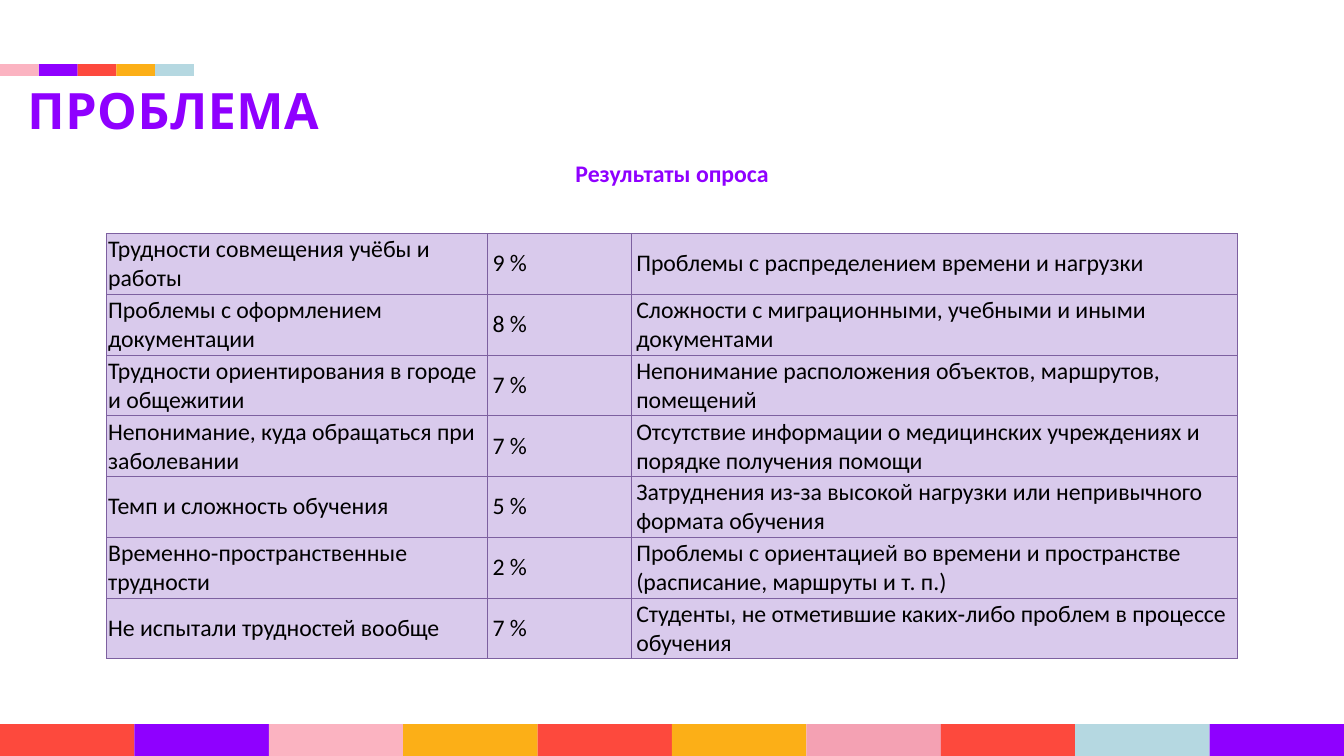
from lxml import etree
from pptx import Presentation
from pptx.dml.color import RGBColor
from pptx.enum.shapes import MSO_SHAPE
from pptx.enum.text import MSO_ANCHOR, MSO_AUTO_SIZE, PP_ALIGN
from pptx.oxml.ns import qn
from pptx.util import Inches, Pt

RECTANGLE = MSO_SHAPE.RECTANGLE
TOP, MIDDLE = MSO_ANCHOR.TOP, MSO_ANCHOR.MIDDLE
NO_AUTOFIT = MSO_AUTO_SIZE.NONE
LEFT, CENTER = PP_ALIGN.LEFT, PP_ALIGN.CENTER
TITLE_ONLY = 5

VIOLET, RED, AMBER = "8F00FF", "FD493D", "FCAF17"
PINK, ROSE, SKY = "FBB3C1", "F4A1B3", "B5D8E1"
BLACK, LILAC, BORDER = "000000", "D9CAEC", "7D60A0"

ACCENT_COLORS = [PINK, VIOLET, RED, AMBER, SKY]
FOOTER_COLORS = [RED, VIOLET, PINK, AMBER, RED, AMBER, ROSE, RED, SKY, VIOLET]

SURVEY = [
    ("Трудности совмещения учёбы и работы", "9 %",
     "Проблемы с распределением времени и нагрузки"),
    ("Проблемы с оформлением документации", "8 %",
     "Сложности с миграционными, учебными и иными документами"),
    ("Трудности ориентирования в городе и общежитии", "7 %",
     "Непонимание расположения объектов, маршрутов, помещений"),
    ("Непонимание, куда обращаться при заболевании", "7 %",
     "Отсутствие информации о медицинских учреждениях и порядке получения помощи"),
    ("Темп и сложность обучения", "5 %",
     "Затруднения из‑за высокой нагрузки или непривычного формата обучения"),
    ("Временно‑пространственные трудности", "2 %",
     "Проблемы с ориентацией во времени и пространстве (расписание, маршруты и т. п.)"),
    ("Не испытали трудностей вообще", "7 %",
     "Студенты, не отметившие каких‑либо проблем в процессе обучения"),
]


def color(value):
    return RGBColor.from_string(value)


def set_margins(target, left, top, right, bottom):
    target.margin_left, target.margin_top = Inches(left), Inches(top)
    target.margin_right, target.margin_bottom = Inches(right), Inches(bottom)


class SlideBuilder:
    """Draws on one slide; all lengths are percent of its width or height."""

    heading_font, body_font = "Karla", "Calibri"
    heading_size, body_size = 59, 28

    def __init__(self, presentation):
        self.width = presentation.slide_width
        self.height = presentation.slide_height
        self.slide = presentation.slides.add_slide(
            presentation.slide_layouts[TITLE_ONLY])

    def x(self, percent):
        return round(self.width * percent / 100)

    def y(self, percent):
        return round(self.height * percent / 100)

    def area(self, left, top, width, height):
        return self.x(left), self.y(top), self.x(width), self.y(height)

    def style(self, paragraph, name, size, ink, bold=False):
        font = paragraph.font
        font.name, font.size, font.bold = name, Pt(size), bold
        font.color.rgb = color(ink)

    def stripes(self, colors, top, width, height):
        """Fills a band from the left edge with equal blocks."""
        step = width / len(colors)
        for index, fill in enumerate(colors):
            block = self.slide.shapes.add_shape(
                RECTANGLE, *self.area(index * step, top, step, height))
            block.shadow.inherit = False
            block.fill.solid()
            block.fill.fore_color.rgb = color(fill)
            block.line.fill.background()

    def title(self, text, *area):
        title = self.slide.shapes.title
        title.left, title.top, title.width, title.height = self.area(*area)
        frame = title.text_frame
        frame.text = text
        frame.auto_size, frame.vertical_anchor = NO_AUTOFIT, TOP
        set_margins(frame, 0.04, 0.15, 0.04, 0.04)
        paragraph = frame.paragraphs[0]
        paragraph.alignment, paragraph.line_spacing = LEFT, Pt(61.9)
        self.style(paragraph, self.heading_font, self.heading_size, VIOLET, True)
        paragraph.font.color.rgb = color(VIOLET)
        paragraph.runs[0].font.bold = True
        for run in paragraph.runs:
            run.font._element.set("spc", "60")

    def caption(self, text, *area):
        frame = self.slide.shapes.add_textbox(*self.area(*area)).text_frame
        frame.word_wrap = True
        frame.text = text
        paragraph = frame.paragraphs[0]
        paragraph.alignment = CENTER
        self.style(paragraph, self.body_font, self.body_size, VIOLET, True)

    def borders(self, cell):
        properties = cell._tc.get_or_add_tcPr()
        for side in ("a:lnL", "a:lnR", "a:lnT", "a:lnB"):
            line = etree.SubElement(properties, qn(side), w=str(Pt(0.75)))
            fill = etree.SubElement(line, qn("a:solidFill"))
            etree.SubElement(fill, qn("a:srgbClr"), val=BORDER)

    def table(self, rows, column_widths, left, top, height):
        area = self.area(left, top, sum(column_widths), height)
        table = self.slide.shapes.add_table(
            len(rows), len(column_widths), *area).table
        table.first_row = table.horz_banding = False
        for column, width in zip(table.columns, column_widths):
            column.width = self.x(width)
        for row, texts in zip(table.rows, rows):
            for index, (cell, text) in enumerate(zip(row.cells, texts)):
                cell.text = text
                cell.vertical_anchor = MIDDLE
                set_margins(cell, 0.08 if index else 0.03, 0.03, 0.08, 0.03)
                self.borders(cell)
                cell.fill.solid()
                cell.fill.fore_color.rgb = color(LILAC)
                self.style(cell.text_frame.paragraphs[0],
                           self.body_font, self.body_size, BLACK)


def main():
    presentation = Presentation()
    presentation.slide_width = Inches(21.99)
    presentation.slide_height = Inches(12.37)

    builder = SlideBuilder(presentation)
    builder.stripes(FOOTER_COLORS, top=95.8, width=100, height=4.2)
    builder.stripes(ACCENT_COLORS, top=8.49, width=14.42, height=1.54)
    builder.title("ПРОБЛЕМА", 1.86, 10.27, 30.42, 8.57)
    builder.caption("Результаты опроса", 36.56, 20.61, 26.88, 8.41)
    builder.table(SURVEY, [28.38, 10.69, 45.06], left=7.91, top=30.88, height=55.94)
    presentation.save("out.pptx")


if __name__ == "__main__":
    main()
